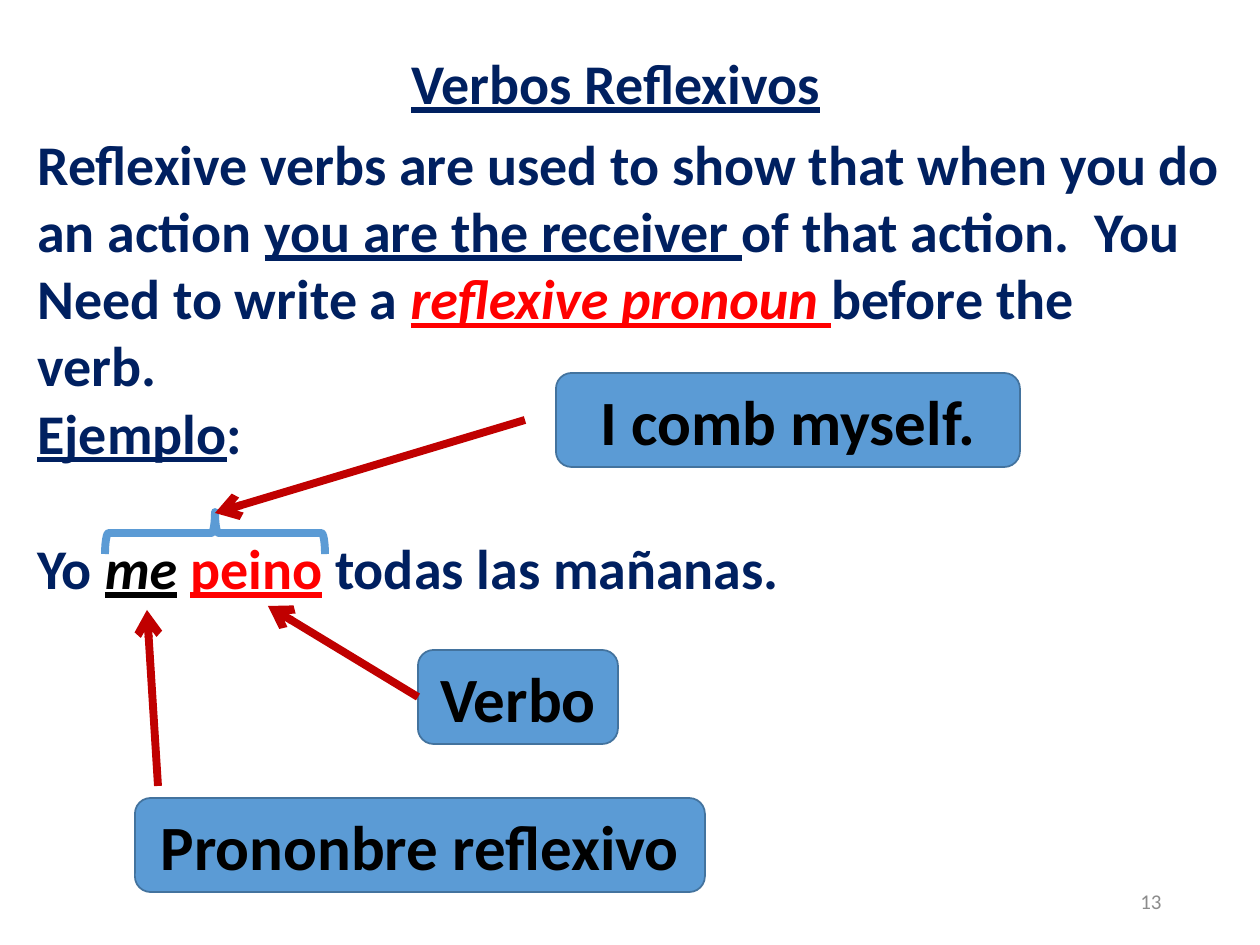
from dataclasses import dataclass

from lxml import etree
from pptx import Presentation
from pptx.dml.color import RGBColor
from pptx.enum.shapes import MSO_CONNECTOR, MSO_SHAPE
from pptx.enum.text import MSO_ANCHOR, MSO_AUTO_SIZE, PP_ALIGN
from pptx.oxml.ns import qn
from pptx.util import Emu, Pt

STRAIGHT = MSO_CONNECTOR.STRAIGHT
ROUNDED, BRACE = MSO_SHAPE.ROUNDED_RECTANGLE, MSO_SHAPE.RIGHT_BRACE
TOP, MIDDLE = MSO_ANCHOR.TOP, MSO_ANCHOR.MIDDLE
LEFT, CENTER, RIGHT = PP_ALIGN.LEFT, PP_ALIGN.CENTER, PP_ALIGN.RIGHT
GROW = MSO_AUTO_SIZE.SHAPE_TO_FIT_TEXT
LEFT_SIDE = 1
PX_PER_INCH = 126


@dataclass(frozen=True)
class Theme:
    font: str = "Calibri"
    navy: str = "002060"
    red: str = "FF0000"
    black: str = "000000"
    gray: str = "8C8C8C"
    blue: str = "5B9BD5"
    blue_edge: str = "43739E"
    arrow: str = "C00000"
    body_pt: int = 32
    label_pt: int = 36
    number_pt: int = 12
    edge_pt: int = 1
    thick_pt: float = 4.5
    blank_line_pt: int = 39


THEME = Theme()


@dataclass(frozen=True)
class Box:
    x: int
    y: int
    w: int
    h: int

    def emu(self) -> list[Emu]:
        return [px(v) for v in (self.x, self.y, self.w, self.h)]


@dataclass(frozen=True)
class Run:
    text: str
    color: str = THEME.navy
    size: int = THEME.body_pt
    bold: bool = True
    italic: bool = False
    underline: bool = False


@dataclass(frozen=True)
class Label:
    text: str
    box: Box


@dataclass(frozen=True)
class Arrow:
    start: tuple[int, int]
    end: tuple[int, int]
    source: str = ""


TITLE = [[Run("Verbos Reflexivos", underline=True)]]
BODY = [
    [Run("Reflexive verbs are used to show that when you do")],
    [Run("an action "), Run("you are the receiver ", underline=True),
     Run("of that action.  You")],
    [Run("Need to write a "),
     Run("reflexive pronoun ", THEME.red, italic=True, underline=True),
     Run("before the")],
    [Run("verb.")],
    [Run("Ejemplo", underline=True), Run(":")],
    [Run("Yo "), Run("me", THEME.black, italic=True, underline=True), Run(" "),
     Run("peino", THEME.red, underline=True), Run(" todas las mañanas.")],
]
NUMBER = [[Run("13", THEME.gray, THEME.number_pt, bold=False)]]

LABELS = [
    Label("Verbo", Box(418, 650, 200, 94)),
    Label("Prononbre reflexivo", Box(135, 798, 570, 94)),
    Label("I comb myself.", Box(556, 373, 464, 94)),
]
ARROWS = [
    Arrow((418, 697), (268, 606), source="Verbo"),
    Arrow((158, 786), (147, 610)),
    Arrow((525, 420), (215, 513)),
]
PHRASE_BRACE = Box(194, 423, 42, 220)


def px(value: int) -> Emu:
    return Emu(round(value * 914400 / PX_PER_INCH))


def rgb(color: str) -> RGBColor:
    return RGBColor.from_string(color)


def write(tf, paragraphs: list[list[Run]], align=LEFT) -> None:
    for i, runs in enumerate(paragraphs):
        p = tf.paragraphs[0] if i == 0 else tf.add_paragraph()
        p.alignment = align
        for run in runs:
            r = p.add_run()
            r.text = run.text
            r.font.name = THEME.font
            r.font.size = Pt(run.size)
            r.font.bold = run.bold
            r.font.italic = run.italic
            r.font.underline = run.underline
            r.font.color.rgb = rgb(run.color)


def add_text(s, box: Box, paragraphs: list[list[Run]], align=LEFT,
             anchor=TOP, wrap=True, auto_size=GROW):
    tf = s.shapes.add_textbox(*box.emu()).text_frame
    tf.word_wrap = wrap
    tf.auto_size = auto_size
    tf.vertical_anchor = anchor
    write(tf, paragraphs, align)
    return tf


def set_line(line, color: str, width: float) -> None:
    line.color.rgb = rgb(color)
    line.width = Pt(width)


def add_label(s, label: Label):
    sp = s.shapes.add_shape(ROUNDED, *label.box.emu())
    sp.shadow.inherit = False
    sp.fill.solid()
    sp.fill.fore_color.rgb = rgb(THEME.blue)
    set_line(sp.line, THEME.blue_edge, THEME.edge_pt)
    sp.text_frame.vertical_anchor = MIDDLE
    write(sp.text_frame, [[Run(label.text, THEME.black, THEME.label_pt)]], CENTER)
    return sp


def add_brace(s, box: Box) -> None:
    sp = s.shapes.add_shape(BRACE, *box.emu())
    sp.shadow.inherit = False
    sp.rotation = 270
    sp.fill.background()
    set_line(sp.line, THEME.blue, THEME.thick_pt)


def add_arrow(s, arrow: Arrow, labels: dict) -> None:
    ends = [px(v) for v in (*arrow.start, *arrow.end)]
    cxn = s.shapes.add_connector(STRAIGHT, *ends)
    if arrow.source:
        cxn.begin_connect(labels[arrow.source], LEFT_SIDE)
    set_line(cxn.line, THEME.arrow, THEME.thick_pt)
    ln = cxn.line._get_or_add_ln()
    etree.SubElement(ln, qn("a:tailEnd"), type="arrow")
    etree.SubElement(ln.getparent(), qn("a:effectLst"))


def main() -> None:
    prs = Presentation()
    prs.slide_width, prs.slide_height = px(1260), px(945)
    s = prs.slides.add_slide(prs.slide_layouts[6])

    add_text(s, Box(890, 876, 284, 50), NUMBER, RIGHT, MIDDLE, auto_size=None)
    add_text(s, Box(399, 42, 462, 81), TITLE)
    body = add_text(s, Box(25, 123, 1232, 488), BODY, wrap=False)
    body.paragraphs[-1].space_before = Pt(THEME.blank_line_pt)

    labels = {label.text: add_label(s, label) for label in LABELS}
    add_brace(s, PHRASE_BRACE)
    for arrow in ARROWS:
        add_arrow(s, arrow, labels)
    prs.save("out.pptx")


if __name__ == "__main__":
    main()
